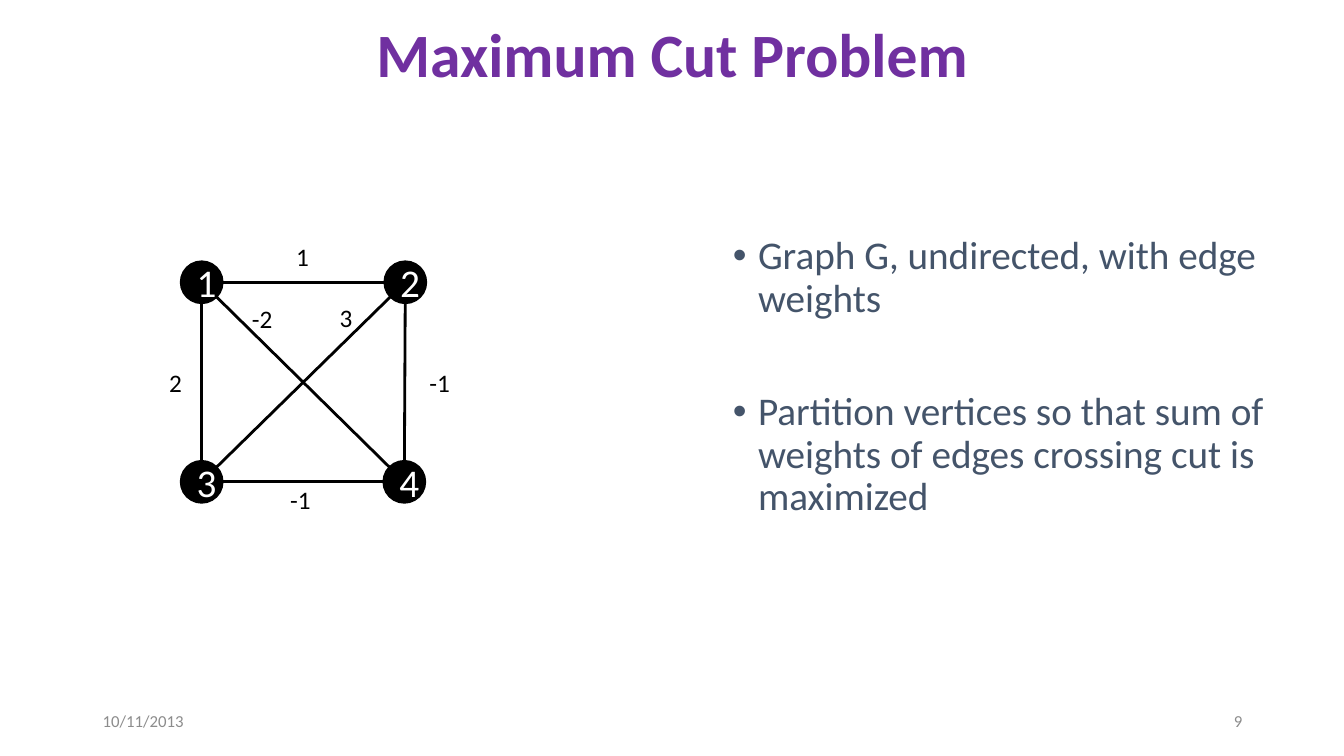
from math import hypot

from lxml.etree import SubElement
from pptx import Presentation
from pptx.dml.color import RGBColor
from pptx.enum.shapes import MSO_CONNECTOR, MSO_SHAPE
from pptx.enum.text import MSO_ANCHOR, PP_ALIGN
from pptx.oxml.ns import qn
from pptx.util import Inches, Pt


def color(value):
    return RGBColor.from_string(value)


def write(paragraph, text, size, fill, bold=False):
    run = paragraph.add_run()
    run.text = text
    run.font.color.rgb = color(fill)
    for name, value in {"name": "Calibri", "size": Pt(size), "bold": bold}.items():
        setattr(run.font, name, value)


deck = Presentation()
deck.slide_width, deck.slide_height = Inches(13.33), Inches(7.5)
slide = deck.slides.add_slide(deck.slide_layouts[6])

headings = [
    ("Maximum Cut Problem", 0.92, 0.12, 11.5, 0.91, PP_ALIGN.CENTER, 44, "7030A0", True),
    ("10/11/2013", 0.92, 6.95, 3, 0.4, PP_ALIGN.LEFT, 12, "8C8C8C", False),
    ("9", 9.42, 6.95, 3, 0.4, PP_ALIGN.RIGHT, 12, "8C8C8C", False),
]
for text, left, top, width, height, align, size, fill, bold in headings:
    frame = slide.shapes.add_textbox(
        Inches(left), Inches(top), Inches(width), Inches(height)
    ).text_frame
    frame.word_wrap = True
    frame.vertical_anchor = MSO_ANCHOR.MIDDLE
    line = frame.paragraphs[0]
    line.alignment = align
    if bold:
        line.line_spacing = 0.9
    write(line, text, size, fill, bold)

radius = 0.21
vertices = {"1": (2, 2.8), "2": (4.02, 2.8), "3": (2, 4.78), "4": (4.01, 4.78)}
edges = [
    ("1", "2", "1", 2.84, 2.34),
    ("1", "3", "2", 1.58, 3.59),
    ("1", "4", "-2", 2.4, 2.96),
    ("2", "4", "-1", 4.16, 3.59),
    ("3", "4", "-1", 2.78, 4.76),
    ("3", "2", "3", 3.27, 2.95),
]

for start, end, weight, left, top in edges:
    (x1, y1), (x2, y2) = vertices[start], vertices[end]
    length = hypot(x2 - x1, y2 - y1)
    dx, dy = (x2 - x1) * radius / length, (y2 - y1) * radius / length
    edge = slide.shapes.add_connector(
        MSO_CONNECTOR.STRAIGHT,
        Inches(x1 + dx), Inches(y1 + dy), Inches(x2 - dx), Inches(y2 - dy),
    )
    edge.line.color.rgb = color("000000")
    edge.line.width = Pt(2)
    SubElement(edge._element.spPr, qn("a:effectLst"))

    label = slide.shapes.add_textbox(
        Inches(left), Inches(top), Inches(0.25 + 0.08 * len(weight)), Inches(0.4)
    ).text_frame
    label.word_wrap = False
    write(label.paragraphs[0], weight, 18, "000000")

for number, (x, y) in vertices.items():
    vertex = slide.shapes.add_shape(
        MSO_SHAPE.OVAL,
        Inches(x - radius), Inches(y - radius), Inches(2 * radius), Inches(2 * radius),
    )
    vertex.shadow.inherit = False
    vertex.fill.solid()
    vertex.fill.fore_color.rgb = color("000000")
    vertex.line.color.rgb = color("000000")
    vertex.line.width = Pt(1)
    vertex.text_frame.vertical_anchor = MSO_ANCHOR.MIDDLE
    vertex.text_frame.paragraphs[0].alignment = PP_ALIGN.CENTER
    write(vertex.text_frame.paragraphs[0], number, 28, "FFFFFF")

definition = slide.shapes.add_textbox(
    Inches(7.17), Inches(2.29), Inches(5.96), Inches(2.9)
).text_frame
definition.word_wrap = True
points = [
    ("Graph G, undirected, with edge weights", 10),
    ("Partition vertices so that sum of weights of edges crossing cut is maximized", 51),
]
for index, (text, space) in enumerate(points):
    point = definition.add_paragraph() if index else definition.paragraphs[0]
    point.line_spacing = 0.9
    point.space_before = Pt(space)
    properties = point._p.get_or_add_pPr()
    properties.set("marL", str(Inches(0.25)))
    properties.set("indent", str(-Inches(0.25)))
    SubElement(properties, qn("a:buFont"), typeface="Arial")
    SubElement(properties, qn("a:buChar"), char="•")
    write(point, text, 28, "44546A")

deck.save("out.pptx")
